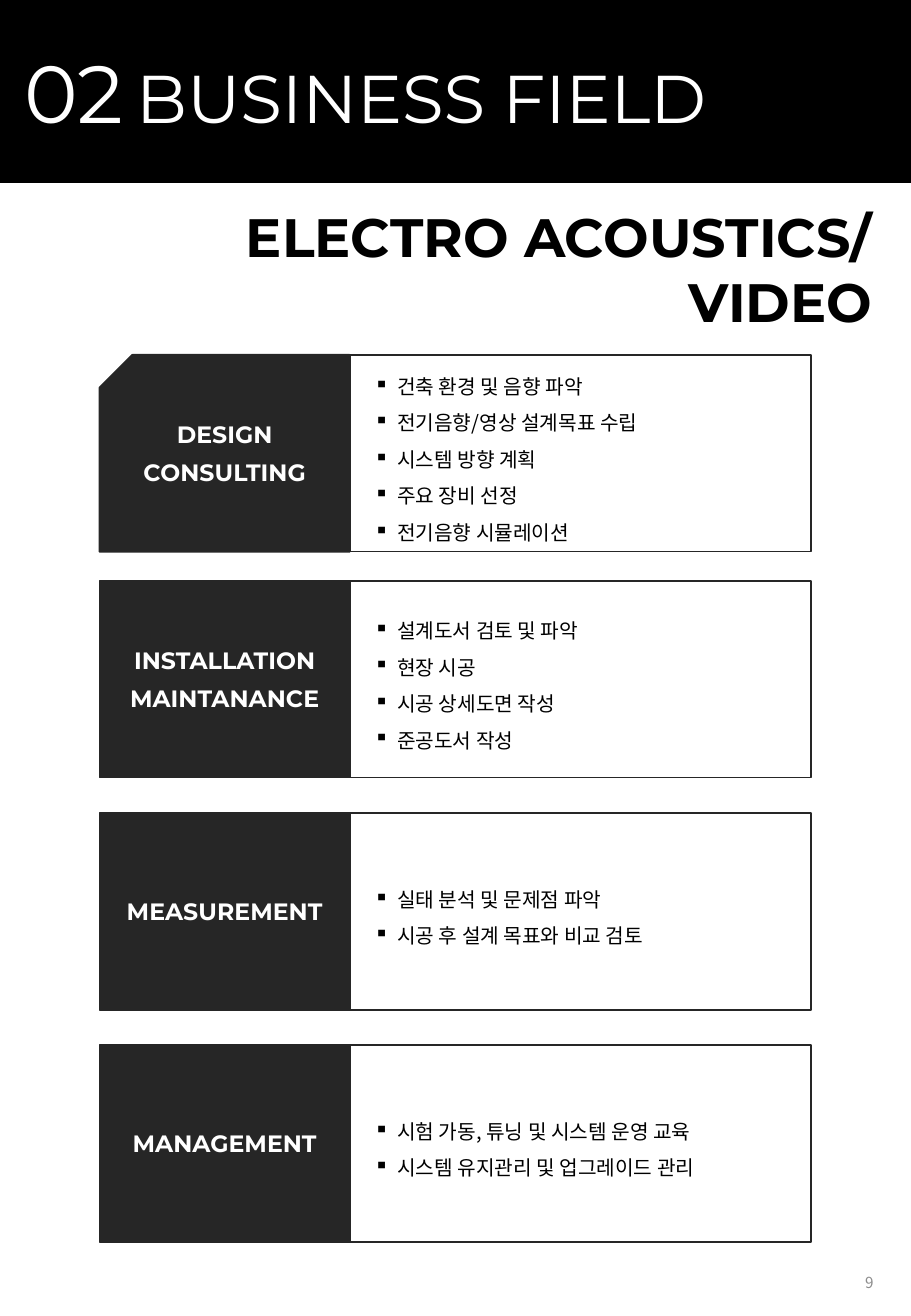
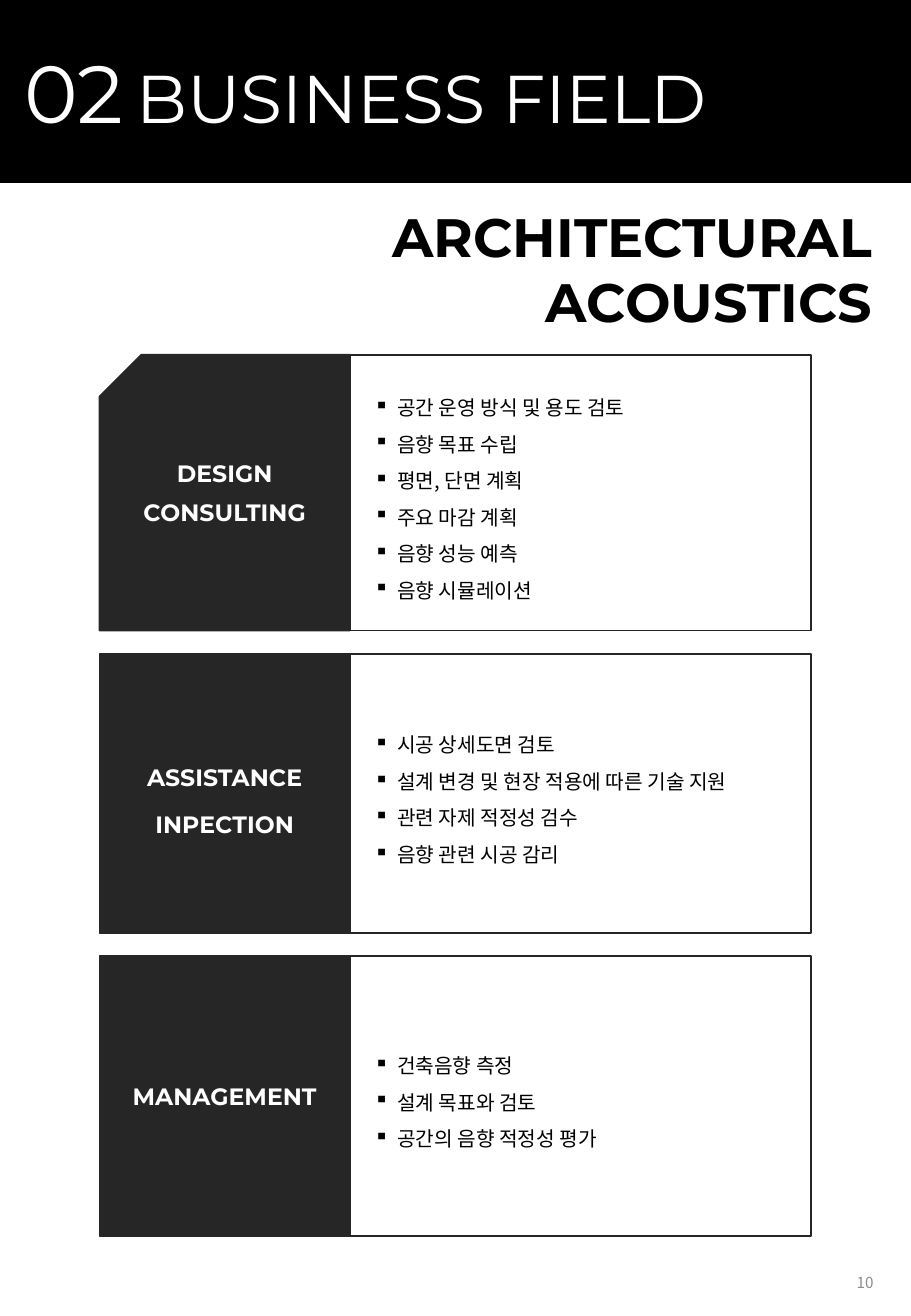
from lxml import etree
from pptx import Presentation
from pptx.dml.color import RGBColor
from pptx.enum.shapes import MSO_SHAPE as SHAPE
from pptx.enum.text import MSO_ANCHOR as ANCHOR, MSO_AUTO_SIZE as AUTO_SIZE, PP_ALIGN as ALIGN
from pptx.oxml.ns import qn
from pptx.util import Inches, Pt

# Shared style
LATIN, KOREAN = "Montserrat", "Noto Sans CJK KR"
BLACK, WHITE, DARK, GRAY = "000000", "FFFFFF", "262626", "8C8C8C"
PAGE_W, PAGE_H, BAND_H = 7.5, 10.83, 1.5
PANEL_LEFT, PANEL_W, LIST_W = 0.82, 2.06, 3.8
CARDS_TOP, BULLET_INDENT = 2.92, 0.19
SECTION = [("02", 48), (" ", 28), ("BUSINESS FIELD", 40)]

# Content: each card has a label, bullets, height and gap above
PAGES = [
    {"number": "9", "heading": ["ELECTRO ACOUSTICS/", "VIDEO"], "cards": [
        {"label": ["DESIGN", "CONSULTING"], "height": 1.62, "gap": 0,
         "bullets": ["건축 환경 및 음향 파악", "전기음향/영상 설계목표 수립", "시스템 방향 계획",
                     "주요 장비 선정", "전기음향 시뮬레이션"]},
        {"label": ["INSTALLATION", "MAINTANANCE"], "height": 1.62, "gap": 0.24,
         "bullets": ["설계도서 검토 및 파악", "현장 시공", "시공 상세도면 작성", "준공도서 작성"]},
        {"label": ["MEASUREMENT"], "height": 1.62, "gap": 0.29,
         "bullets": ["실태 분석 및 문제점 파악", "시공 후 설계 목표와 비교 검토"]},
        {"label": ["MANAGEMENT"], "height": 1.62, "gap": 0.29,
         "bullets": ["시험 가동, 튜닝 및 시스템 운영 교육", "시스템 유지관리 및 업그레이드 관리"]},
    ]},
    {"number": "10", "heading": ["ARCHITECTURAL ACOUSTICS"], "cards": [
        {"label": ["DESIGN", "CONSULTING"], "height": 2.27, "gap": 0,
         "bullets": ["공간 운영 방식 및 용도 검토", "음향 목표 수립", "평면, 단면 계획",
                     "주요 마감 계획", "음향 성능 예측", "음향 시뮬레이션"]},
        {"label": ["ASSISTANCE", "INPECTION"], "height": 2.3, "gap": 0.19,
         "label_format": {"spacing": 1.5, "before": 3},
         "bullets": ["시공 상세도면 검토", "설계 변경 및 현장 적용에 따른 기술 지원",
                     "관련 자제 적정성 검수", "음향 관련 시공 감리"]},
        {"label": ["MANAGEMENT"], "height": 2.3, "gap": 0.19,
         "bullets": ["건축음향 측정", "설계 목표와 검토", "공간의 음향 적정성 평가"]},
    ]},
]


def rgb(value):
    return RGBColor.from_string(value)


def paint(shape, fill, line):
    shape.fill.solid()
    shape.fill.fore_color.rgb = rgb(fill)
    shape.line.color.rgb = rgb(line)
    shape.line.width = Pt(1)


def add_box(slide, kind, bounds, fill):
    box = slide.shapes.add_shape(kind, *map(Inches, bounds))
    box.shadow.inherit = False
    paint(box, fill, DARK)
    return box


def write(shape, paragraphs, size=12, font=LATIN, color=BLACK, bold=False, align=ALIGN.LEFT,
          spacing=1.0, before=0, bullet=None, left=0.1):
    """Fill a shape; a paragraph is a string or a list of (text, size) runs."""
    frame = shape.text_frame
    frame.word_wrap = True
    frame.auto_size = AUTO_SIZE.NONE
    frame.vertical_anchor = ANCHOR.MIDDLE
    frame.margin_left = Inches(left)
    for i, content in enumerate(paragraphs):
        paragraph = frame.add_paragraph() if i else frame.paragraphs[0]
        if bullet:
            props = paragraph._p.get_or_add_pPr()
            props.set("marL", str(Inches(BULLET_INDENT)))
            props.set("indent", str(-Inches(BULLET_INDENT)))
            etree.SubElement(props, qn("a:buChar")).set("char", bullet)
        paragraph.alignment = align
        paragraph.line_spacing = spacing
        paragraph.space_before = Pt(before if i else 0)
        for text, run_size in [(content, size)] if isinstance(content, str) else content:
            run = paragraph.add_run()
            run.text = text
            run.font.size = Pt(run_size)
            run.font.name = font
            run.font.bold = bold
            run.font.color.rgb = rgb(color)
            etree.SubElement(run.font._element, qn("a:ea")).set("typeface", font)


def add_text(slide, bounds, paragraphs, **text_format):
    write(slide.shapes.add_textbox(*map(Inches, bounds)), paragraphs, **text_format)


def add_card(slide, card, top, snipped):
    height = card["height"]
    list_box = add_box(slide, SHAPE.RECTANGLE, (PANEL_LEFT + PANEL_W, top, LIST_W, height), WHITE)
    write(list_box, card["bullets"], font=KOREAN, spacing=1.5, bullet="▪", left=0.2)
    panel_bounds = (PANEL_LEFT, top, PANEL_W, height)
    panel = add_box(slide, SHAPE.SNIP_1_RECTANGLE if snipped else SHAPE.RECTANGLE,
                    panel_bounds, DARK)
    if snipped:
        panel._element.spPr.find(qn("a:xfrm")).set("flipH", "1")
    label_format = {"before": 6, **card.get("label_format", {})}
    add_text(slide, panel_bounds, card["label"], size=14, color=WHITE, bold=True,
             align=ALIGN.CENTER, **label_format)


def add_page(prs, page):
    slide = prs.slides.add_slide(prs.slide_layouts[5])

    # Section band
    band = slide.shapes.title
    band.left, band.top = Inches(0), Inches(0)
    band.width, band.height = Inches(PAGE_W), Inches(BAND_H)
    paint(band, BLACK, BLACK)
    write(band, [SECTION], color=WHITE, left=0.2)

    # Heading and page number
    add_text(slide, (0.69, 1.62, 6.59, 1.18), page["heading"], size=32, bold=True,
             align=ALIGN.RIGHT)
    add_text(slide, (5.6, 10.26, 1.69, 0.58), [page["number"]], size=9, font=KOREAN,
             color=GRAY, align=ALIGN.RIGHT)

    # Cards, stacked downwards
    top = CARDS_TOP
    for i, card in enumerate(page["cards"]):
        top += card["gap"]
        add_card(slide, card, top, snipped=i == 0)
        top += card["height"]


def main():
    prs = Presentation()
    prs.slide_width, prs.slide_height = Inches(PAGE_W), Inches(PAGE_H)
    for page in PAGES:
        add_page(prs, page)
    prs.save("out.pptx")


if __name__ == "__main__":
    main()
